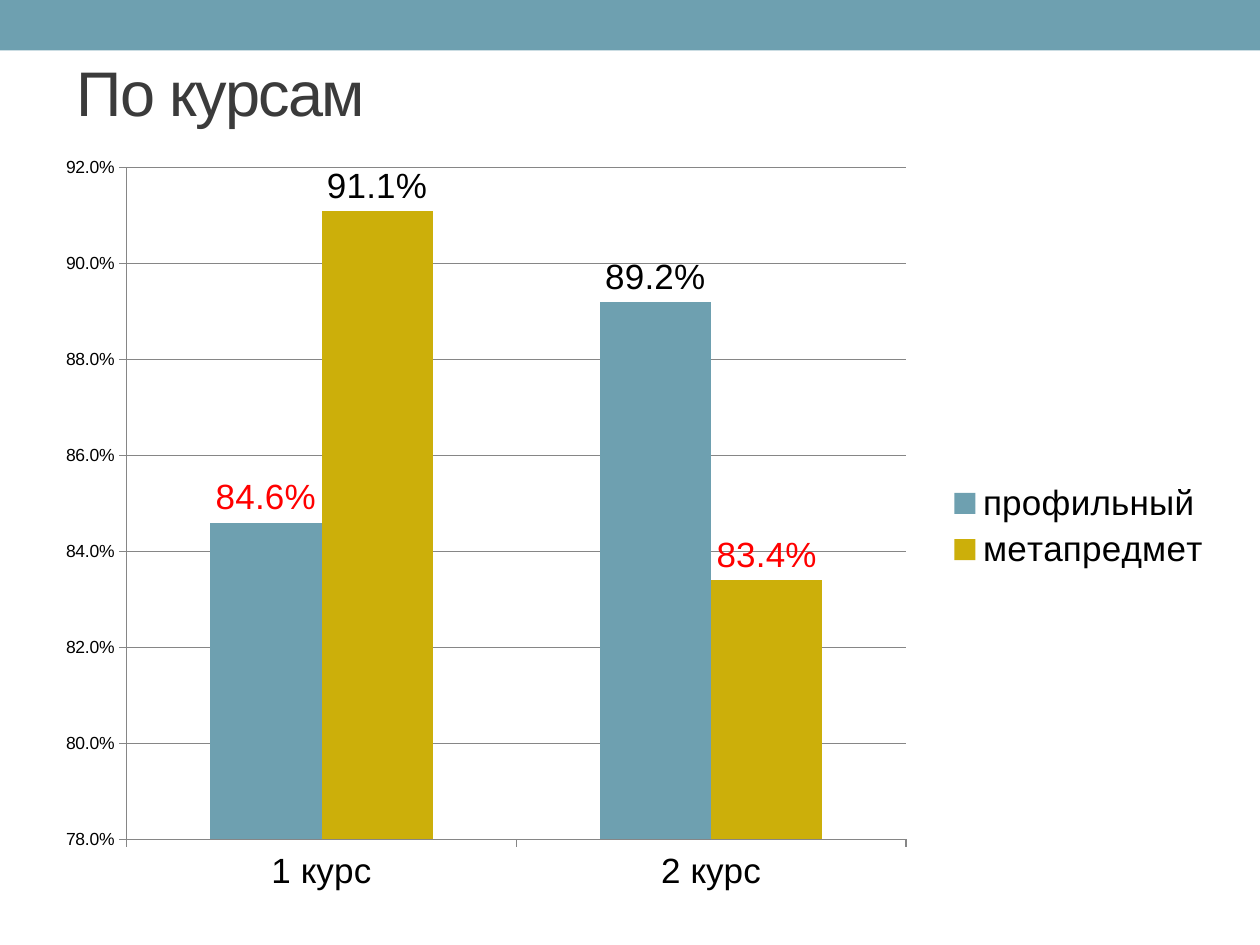
"""Build a slide with a clustered column chart of results by course."""
from dataclasses import dataclass

import pptx
import pptx.chart.data
import pptx.dml.color
import pptx.enum.chart
import pptx.enum.shapes
import pptx.enum.text
import pptx.oxml
import pptx.oxml.ns
import pptx.util
from pptx.util import Cm

TEAL = pptx.dml.color.RGBColor(0x6E, 0xA0, 0xB0)
GOLD = pptx.dml.color.RGBColor(0xCC, 0xAF, 0x0A)
RED = pptx.dml.color.RGBColor(0xFF, 0x00, 0x00)
BLACK = pptx.dml.color.RGBColor(0x00, 0x00, 0x00)
CHARCOAL = pptx.dml.color.RGBColor(0x3B, 0x3B, 0x3B)
GREY = pptx.dml.color.RGBColor(0x86, 0x86, 0x86)
FONT_NAME = "Arial"
PERCENT = "0.0%"
COURSES = ("1 курс", "2 курс")


@dataclass(frozen=True)
class SubjectSeries:
    name: str
    values: tuple[float, ...]
    color: pptx.dml.color.RGBColor
    red_label: int


SUBJECTS = (
    SubjectSeries("профильный", (0.846, 0.892), TEAL, 0),
    SubjectSeries("метапредмет", (0.911, 0.834), GOLD, 1),
)


def style_font(font, size: float, color: pptx.dml.color.RGBColor = BLACK) -> None:
    font.name = FONT_NAME
    font.size = pptx.util.Pt(size)
    font.color.rgb = color


def add_banner(slide, width: int) -> None:
    banner = slide.shapes.add_shape(
        pptx.enum.shapes.MSO_SHAPE.RECTANGLE, 0, 0, width, Cm(1.02))
    banner.shadow.inherit = False
    banner.fill.solid()
    banner.fill.fore_color.rgb = TEAL
    banner.line.fill.background()


def add_title(slide, text: str) -> None:
    title = slide.shapes.add_textbox(Cm(1.3), Cm(0.91), Cm(23.42), Cm(1.85))
    title.text_frame.word_wrap = True
    title.text_frame.vertical_anchor = pptx.enum.text.MSO_ANCHOR.MIDDLE
    paragraph = title.text_frame.paragraphs[0]
    run = paragraph.add_run()
    run.text = text
    style_font(paragraph.font, 36, CHARCOAL)
    run.font._element.set("spc", "-100")


def place_plot(chart, x: float, y: float, width: float, height: float) -> None:
    plot_area = chart._chartSpace.chart.plotArea
    for layout in plot_area.findall(pptx.oxml.ns.qn("c:layout")):
        plot_area.remove(layout)
    plot_area.insert(0, pptx.oxml.parse_xml(
        f'<c:layout {pptx.oxml.ns.nsdecls("c")}><c:manualLayout>'
        '<c:layoutTarget val="inner"/><c:xMode val="edge"/><c:yMode val="edge"/>'
        f'<c:x val="{x}"/><c:y val="{y}"/><c:w val="{width}"/><c:h val="{height}"/>'
        '</c:manualLayout></c:layout>'))


def style_axes(chart) -> None:
    for axis, size in ((chart.category_axis, 20), (chart.value_axis, 10)):
        style_font(axis.tick_labels.font, size)
        axis.major_tick_mark = pptx.enum.chart.XL_TICK_MARK.OUTSIDE
        axis.format.line.color.rgb = GREY
    value_axis = chart.value_axis
    value_axis.minimum_scale = 0.78
    value_axis.maximum_scale = 0.92
    value_axis.major_unit = 0.02
    value_axis.has_major_gridlines = True
    value_axis.major_gridlines.format.line.color.rgb = GREY
    value_axis.tick_labels.number_format = PERCENT
    value_axis.tick_labels.number_format_is_linked = False


def style_series(series, subject: SubjectSeries) -> None:
    series.format.fill.solid()
    series.format.fill.fore_color.rgb = subject.color
    labels = series.data_labels
    labels.show_value = True
    labels.number_format = PERCENT
    labels.number_format_is_linked = False
    red_label = series.points[subject.red_label].data_label
    for label, color in ((labels, BLACK), (red_label, RED)):
        label.position = pptx.enum.chart.XL_LABEL_POSITION.OUTSIDE_END
        style_font(label.font, 20, color)


def add_course_chart(slide) -> None:
    data = pptx.chart.data.CategoryChartData(number_format=PERCENT)
    data.categories = COURSES
    for subject in SUBJECTS:
        data.add_series(subject.name, subject.values)
    chart = slide.shapes.add_chart(
        pptx.enum.chart.XL_CHART_TYPE.COLUMN_CLUSTERED,
        Cm(0.89), Cm(2.92), Cm(23.8), Cm(15.39), data).chart
    style_font(chart.font, 10)
    chart.has_title = False
    chart.has_legend = True
    chart.legend.position = pptx.enum.chart.XL_LEGEND_POSITION.RIGHT
    chart.legend.include_in_layout = False
    style_font(chart.legend.font, 20)
    plot = chart.plots[0]
    plot.gap_width = 150
    plot.overlap = 0
    plot.vary_by_categories = False
    place_plot(chart, 0.07, 0.03, 0.66, 0.88)
    style_axes(chart)
    for series, subject in zip(plot.series, SUBJECTS):
        style_series(series, subject)


def main() -> None:
    presentation = pptx.Presentation()
    presentation.slide_width = Cm(25.4)
    presentation.slide_height = Cm(19.05)
    slide = presentation.slides.add_slide(presentation.slide_layouts[6])
    add_banner(slide, presentation.slide_width)
    add_title(slide, "По курсам")
    add_course_chart(slide)
    presentation.save("out.pptx")


if __name__ == "__main__":
    main()
